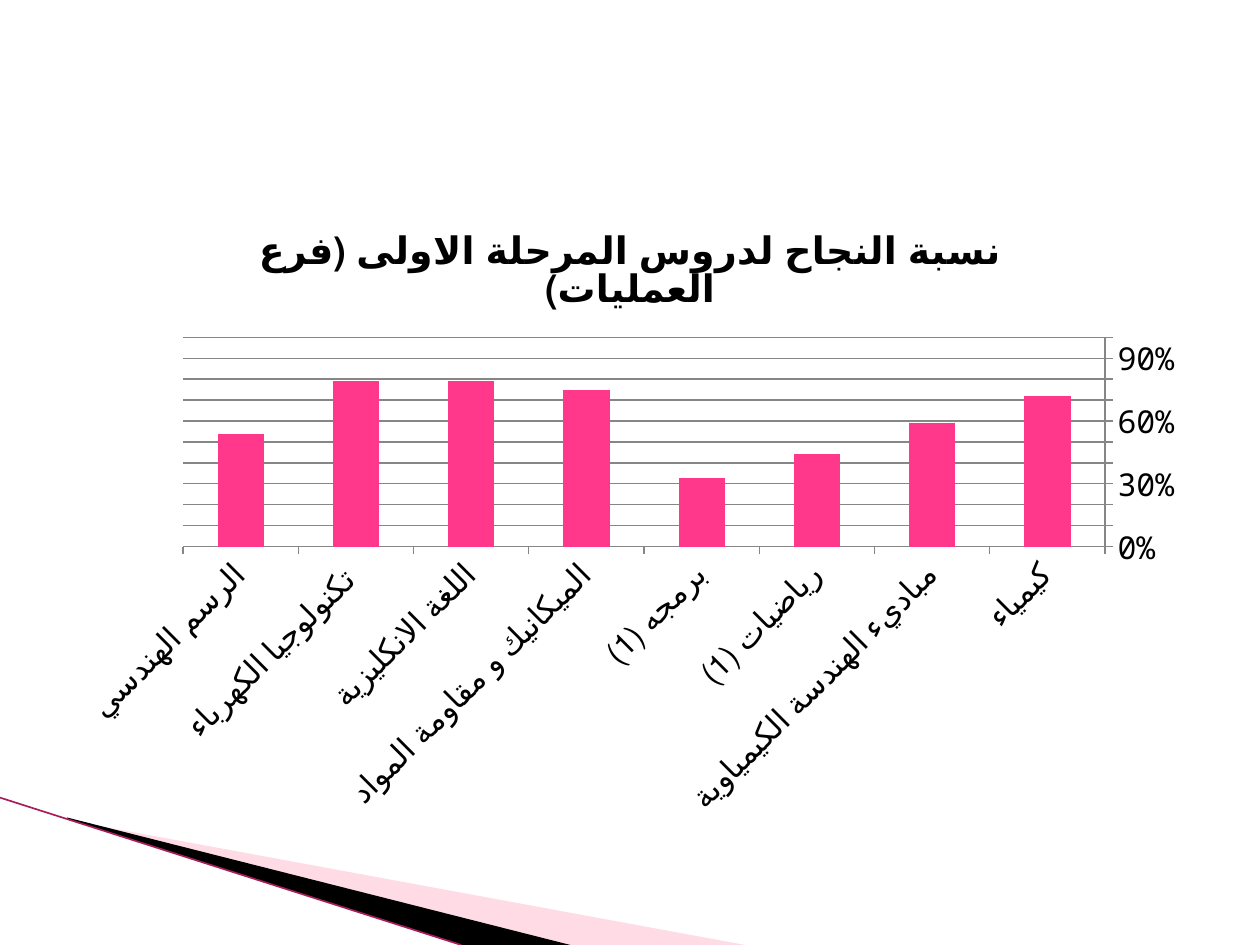
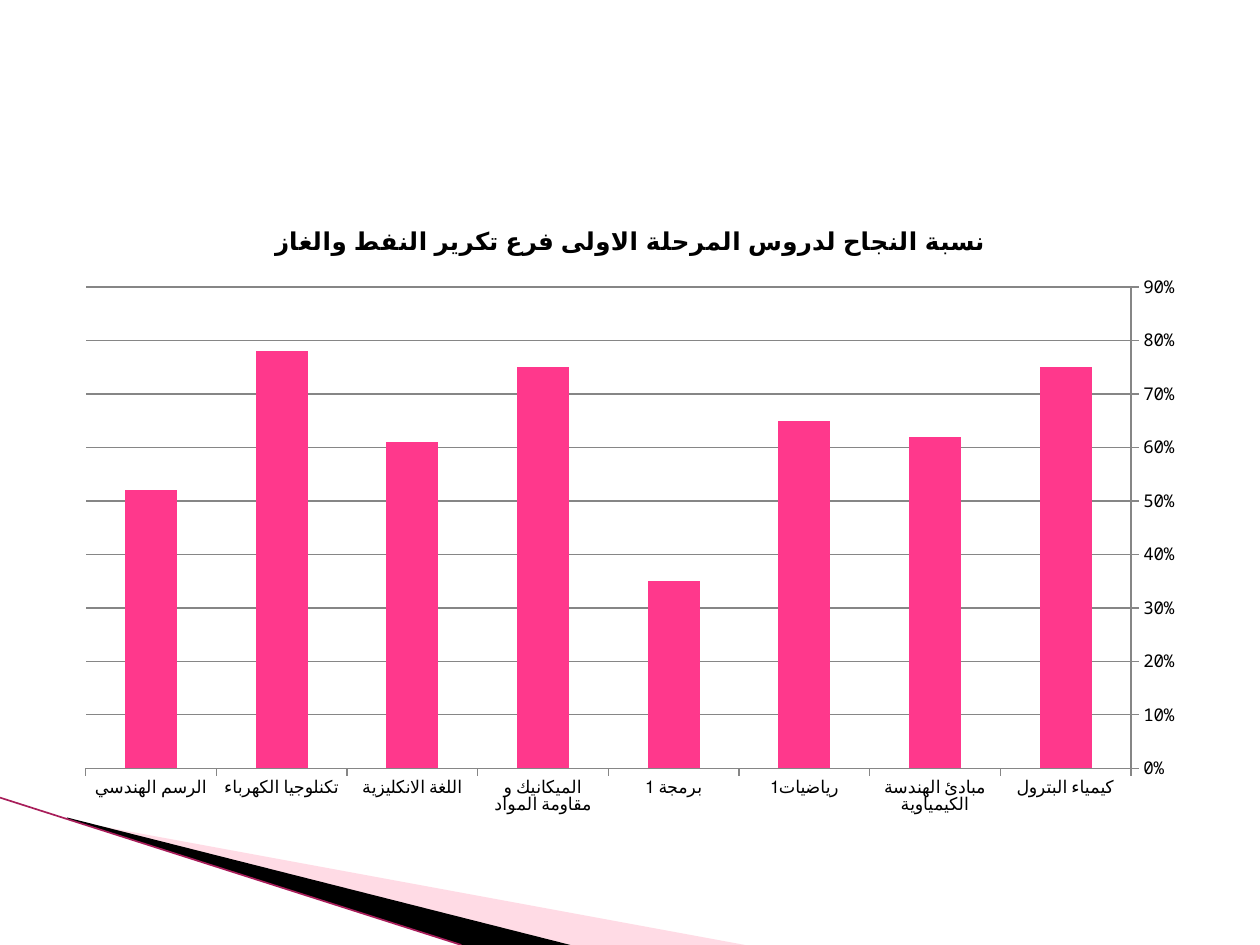
from dataclasses import dataclass

from lxml import etree
from pptx import Presentation
from pptx.chart.data import CategoryChartData
from pptx.dml.color import RGBColor
from pptx.enum.chart import XL_CHART_TYPE, XL_TICK_MARK
from pptx.enum.shapes import MSO_CONNECTOR
from pptx.oxml.ns import qn
from pptx.util import Cm, Pt

COLUMNS = XL_CHART_TYPE.COLUMN_CLUSTERED
TICK_OUTSIDE, TICK_NONE = XL_TICK_MARK.OUTSIDE, XL_TICK_MARK.NONE
STRAIGHT = MSO_CONNECTOR.STRAIGHT


@dataclass(frozen=True)
class Theme:
    font: str = "Noto Sans Mono"
    text: str = "000000"
    bars: str = "FF388C"
    grid: str = "868686"
    pale_wedge: str = "FFA5BF"
    dark_wedge: str = "000000"
    edge: str = "A81E5A"
    grid_width: float = 0.75
    edge_width: float = 0.95


THEME = Theme()

PASS_RATES = [
    {
        "title": "نسبة النجاح لدروس المرحلة الاولى (فرع العمليات)",
        "title_size": 21.6,
        "label_size": 18,
        "label_angle": -45,
        "plot_box": (3.69, 6.8, 18.59, 4.22),
        "top": 1.0,
        "rates": [
            ("كيمياء", 0.72),
            ("مباديء الهندسة الكيمياوية", 0.59),
            ("رياضيات (1)", 0.44),
            ("برمجه (1)", 0.33),
            ("الميكانيك و مقاومة المواد", 0.75),
            ("اللغة الانكليزية", 0.79),
            ("تكنولوجيا الكهرباء ", 0.79),
            ("الرسم الهندسي", 0.54),
        ],
    },
    {
        "title": "نسبة النجاح لدروس المرحلة الاولى فرع تكرير النفط والغاز",
        "title_size": 14,
        "label_size": 10,
        "label_angle": None,
        "plot_box": None,
        "top": 0.9,
        "rates": [
            ("كيمياء البترول", 0.75),
            ("مبادئ الهندسة الكيمياوية", 0.62),
            ("رياضيات1", 0.65),
            ("برمجة 1", 0.35),
            ("الميكانيك و مقاومة المواد", 0.75),
            ("اللغة الانكليزية", 0.61),
            ("تكنلوجيا الكهرباء", 0.78),
            ("الرسم الهندسي", 0.52),
        ],
    },
]

# Places in centimetres
SLIDE_SIZE = (25.4, 19.05)
CHART_BOX = (1.27, 4.11, 22.86, 12.57)
EDGE_FOOT, DARK_FOOT, PALE_FOOT = (9.3, 19.05), (11.5, 19.05), (15.02, 19.05)
EDGE_START = (0, 16.08)
WEDGES = [
    {
        "outline": [(1.4, 16.54), PALE_FOOT, DARK_FOOT, (1.4, 16.51)],
        "frame": (1.98, 13.89, 10.57, 4.01),
        "color": THEME.pale_wedge,
        "opacity": 40,
    },
    {
        "outline": [(1.35, 16.48), DARK_FOOT, EDGE_FOOT, (1.37, 16.51)],
        "frame": (-0.15, 16.08, 10.57, 2.34),
        "color": THEME.dark_wedge,
        "opacity": 100,
    },
]


def cm(values):
    return [Cm(value) for value in values]


def style_line(line, color, width):
    line.color.rgb = RGBColor.from_string(color)
    line.width = Pt(width)


def style_font(font, size, bold=False, color=THEME.text):
    font.name = THEME.font
    font.size = Pt(size)
    font.bold = bold
    font.color.rgb = RGBColor.from_string(color)


def write_text(frame, text, *, size, bold=False, rtl=True):
    paragraph = frame.paragraphs[0]
    run = paragraph.add_run()
    run.text = text
    style_font(run.font, size, bold)
    if rtl:
        paragraph._p.get_or_add_pPr().set("rtl", "1")


def reframe(shape, frame):
    """Give a freeform a new frame while its outline stays where it is."""
    left, top, width, height = cm(frame)
    outline = shape._element.spPr.find(".//" + qn("a:path"))
    for point in outline.iter(qn("a:pt")):
        point.set("x", str(int(point.get("x")) + shape.left - left))
        point.set("y", str(int(point.get("y")) + shape.top - top))
    outline.set("w", str(width))
    outline.set("h", str(height))
    shape.left, shape.top, shape.width, shape.height = left, top, width, height


def add_wedge(slide, outline, frame, color, opacity):
    start, *corners = [cm(corner) for corner in outline]
    builder = slide.shapes.build_freeform(*start)
    builder.add_line_segments(corners, close=True)
    wedge = builder.convert_to_shape()
    reframe(wedge, frame)
    wedge.shadow.inherit = False
    wedge.line.fill.background()
    wedge.fill.solid()
    wedge.fill.fore_color.rgb = RGBColor.from_string(color)
    if opacity < 100:
        tint = wedge._element.spPr.find(".//" + qn("a:srgbClr"))
        etree.SubElement(tint, qn("a:alpha")).set("val", str(opacity * 1000))


def add_corner_band(slide):
    for wedge in WEDGES:
        add_wedge(slide, **wedge)
    edge = slide.shapes.add_connector(STRAIGHT, *cm(EDGE_START + EDGE_FOOT))
    style_line(edge.line, THEME.edge, THEME.edge_width)
    etree.SubElement(edge._element.spPr, qn("a:effectLst"))


def style_axis(axis, size):
    axis.major_tick_mark = TICK_OUTSIDE
    axis.minor_tick_mark = TICK_NONE
    style_line(axis.format.line, THEME.grid, THEME.grid_width)
    style_font(axis.tick_labels.font, size)


def place_plot(chart, box):
    """Fix the inner plot area at a box given in slide centimetres."""
    left, top, width, height = CHART_BOX
    shares = {
        "x": (box[0] - left) / width,
        "y": (box[1] - top) / height,
        "w": box[2] / width,
        "h": box[3] / height,
    }
    plot_area = chart._chartSpace.chart.plotArea
    for old_layout in plot_area.findall(qn("c:layout")):
        plot_area.remove(old_layout)
    layout = etree.Element(qn("c:layout"))
    plot_area.insert(0, layout)
    manual = etree.SubElement(layout, qn("c:manualLayout"))
    settings = {"layoutTarget": "inner", "xMode": "edge", "yMode": "edge", **shares}
    for tag, value in settings.items():
        etree.SubElement(manual, qn("c:" + tag)).set("val", str(value))


def add_rate_chart(slide, group):
    data = CategoryChartData(number_format="0%")
    subjects, rates = zip(*group["rates"])
    data.categories = subjects
    data.add_series("Series 1", rates)
    chart = slide.shapes.add_chart(COLUMNS, *cm(CHART_BOX), data).chart

    size = group["label_size"]
    style_font(chart.font, size)
    chart.has_legend = False
    chart.has_title = True
    chart.chart_title.include_in_layout = False
    write_text(chart.chart_title.text_frame, group["title"],
               size=group["title_size"], bold=True)
    if group["plot_box"]:
        place_plot(chart, group["plot_box"])

    columns = chart.plots[0]
    columns.gap_width = 150
    columns.vary_by_categories = False
    bars = columns.series[0].format.fill
    bars.solid()
    bars.fore_color.rgb = RGBColor.from_string(THEME.bars)

    subject_axis, rate_axis = chart.category_axis, chart.value_axis
    for axis in (subject_axis, rate_axis):
        style_axis(axis, size)
    subject_axis.reverse_order = True
    if group["label_angle"] is not None:
        body = subject_axis._element.find(qn("c:txPr")).find(qn("a:bodyPr"))
        body.set("rot", str(group["label_angle"] * 60000))

    rate_axis.minimum_scale = 0
    rate_axis.maximum_scale = group["top"]
    rate_axis.major_unit = 0.1
    rate_axis.has_major_gridlines = True
    style_line(rate_axis.major_gridlines.format.line, THEME.grid, THEME.grid_width)
    rate_axis.tick_labels.number_format = "0%"
    rate_axis.tick_labels.number_format_is_linked = False


def main():
    deck = Presentation()
    deck.slide_width, deck.slide_height = cm(SLIDE_SIZE)
    blank = deck.slide_layouts[6]
    for group in PASS_RATES:
        slide = deck.slides.add_slide(blank)
        add_corner_band(slide)
        add_rate_chart(slide, group)
    deck.save("out.pptx")


if __name__ == "__main__":
    main()
